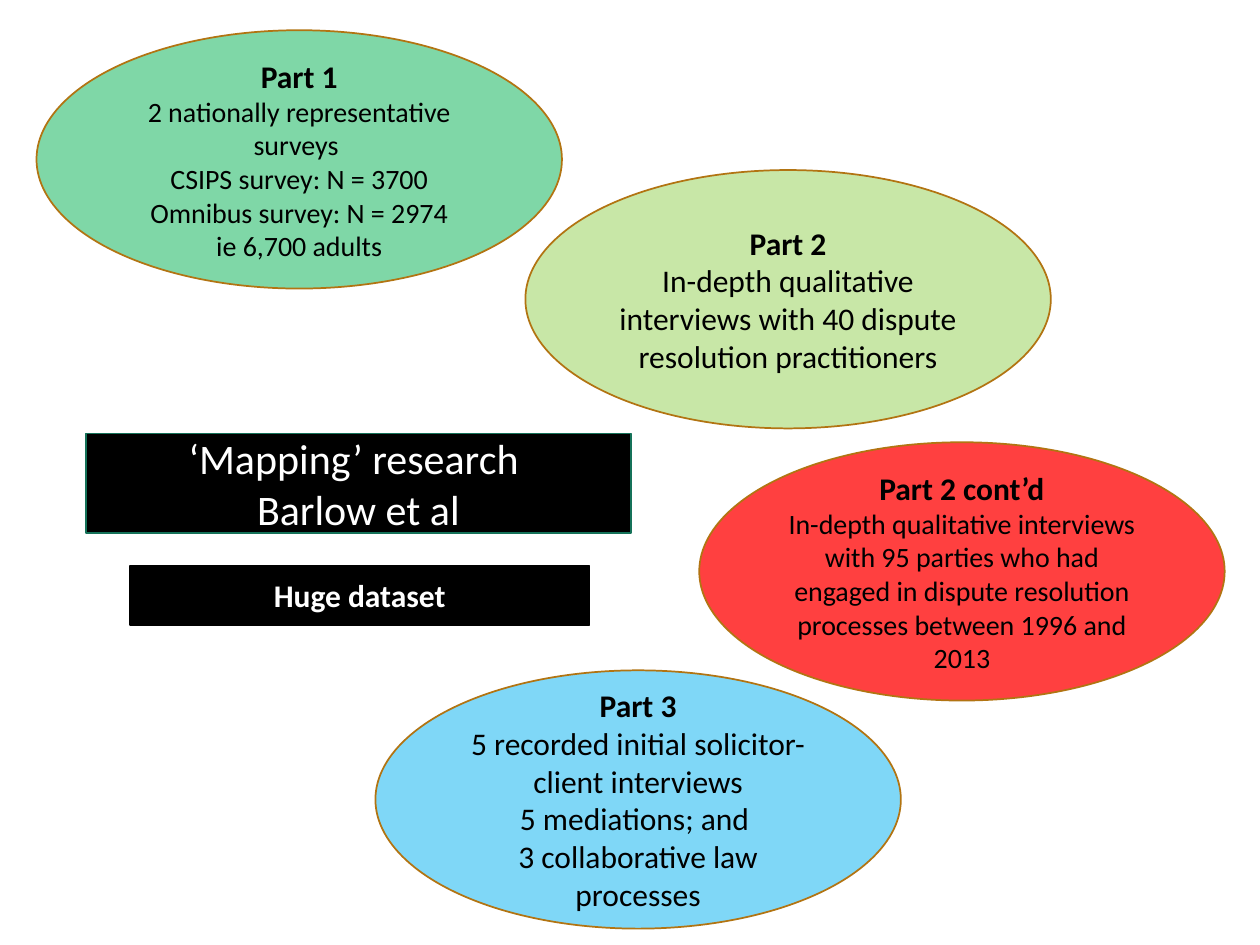
"""Build the slide that maps the parts of the Barlow et al research dataset."""
from lxml.etree import SubElement
from pptx import Presentation
from pptx.dml.color import RGBColor
from pptx.enum.shapes import MSO_SHAPE as SHAPE
from pptx.enum.text import MSO_ANCHOR as ANCHOR, MSO_AUTO_SIZE as AUTO_SIZE, PP_ALIGN as ALIGN
from pptx.oxml.ns import qn
from pptx.util import Inches, Pt

BLACK = RGBColor(0x00, 0x00, 0x00)
WHITE = RGBColor(0xFF, 0xFF, 0xFF)
TEAL = RGBColor(0x15, 0x72, 0x59)
BROWN = RGBColor(0xB2, 0x74, 0x12)
GREEN = RGBColor(0x00, 0xB0, 0x50)
BLUE = RGBColor(0x00, 0xB0, 0xF0)
LIME = RGBColor(0x92, 0xD0, 0x50)
RED = RGBColor(0xFF, 0x00, 0x00)


def write(shape, lines, size=18, heading_size=18, heading_bold=True, color=BLACK):
    frame = shape.text_frame
    frame.word_wrap = True
    frame.auto_size = AUTO_SIZE.NONE
    frame.vertical_anchor = ANCHOR.MIDDLE
    for index, line in enumerate(lines):
        paragraph = frame.paragraphs[0] if index == 0 else frame.add_paragraph()
        paragraph.alignment = ALIGN.CENTER
        run = paragraph.add_run()
        run.text = line
        run.font.name = "Calibri"
        run.font.size = Pt(heading_size if index == 0 else size)
        run.font.bold = heading_bold and index == 0
        run.font.color.rgb = color


def paint(shape, fill, line, opacity=100):
    shape.fill.solid()
    shape.fill.fore_color.rgb = fill
    shape.line.color.rgb = line
    shape.line.width = Pt(1)
    shape.shadow.inherit = False
    if opacity < 100:
        color = shape.fill._xPr.find(qn("a:solidFill")).find(qn("a:srgbClr"))
        SubElement(color, qn("a:alpha"), val=str(opacity * 1000))


prs = Presentation()
prs.slide_width, prs.slide_height = Inches(10), Inches(7.5)
slide = prs.slides.add_slide(prs.slide_layouts[5])

study = slide.shapes.title
study.left, study.top = Inches(0.68), Inches(3.44)
study.width, study.height = Inches(4.33), Inches(0.79)
paint(study, BLACK, TEAL)
write(study, ["‘Mapping’ research ", "Barlow et al"],
      size=24, heading_size=24, heading_bold=False, color=WHITE)

PARTS = [
    (0.29, 0.24, GREEN, 50, 16, [
        "Part 1", "2 nationally representative surveys ", "CSIPS survey: N = 3700",
        "Omnibus survey: N = 2974", "ie 6,700 adults"]),
    (2.98, 5.32, BLUE, 50, 18, [
        "Part 3", "5 recorded initial solicitor-client interviews",
        "5 mediations; and ", "3 collaborative law processes"]),
    (4.17, 1.35, LIME, 50, 18, [
        "Part 2",
        "In-depth qualitative interviews with 40 dispute resolution practitioners"]),
    (5.55, 3.51, RED, 75, 16, [
        "Part 2 cont’d",
        "In-depth qualitative interviews with 95 parties who had engaged in "
        "dispute resolution processes between 1996 and 2013"]),
]
for left, top, fill, opacity, size, lines in PARTS:
    part = slide.shapes.add_shape(
        SHAPE.OVAL, Inches(left), Inches(top), Inches(4.17), Inches(2.05))
    paint(part, fill, BROWN, opacity)
    write(part, lines, size=size)

dataset = slide.shapes.add_shape(
    SHAPE.RECTANGLE, Inches(1.03), Inches(4.49), Inches(3.65), Inches(0.47))
paint(dataset, BLACK, BLACK)
write(dataset, ["Huge dataset"], color=WHITE)

prs.save("out.pptx")
